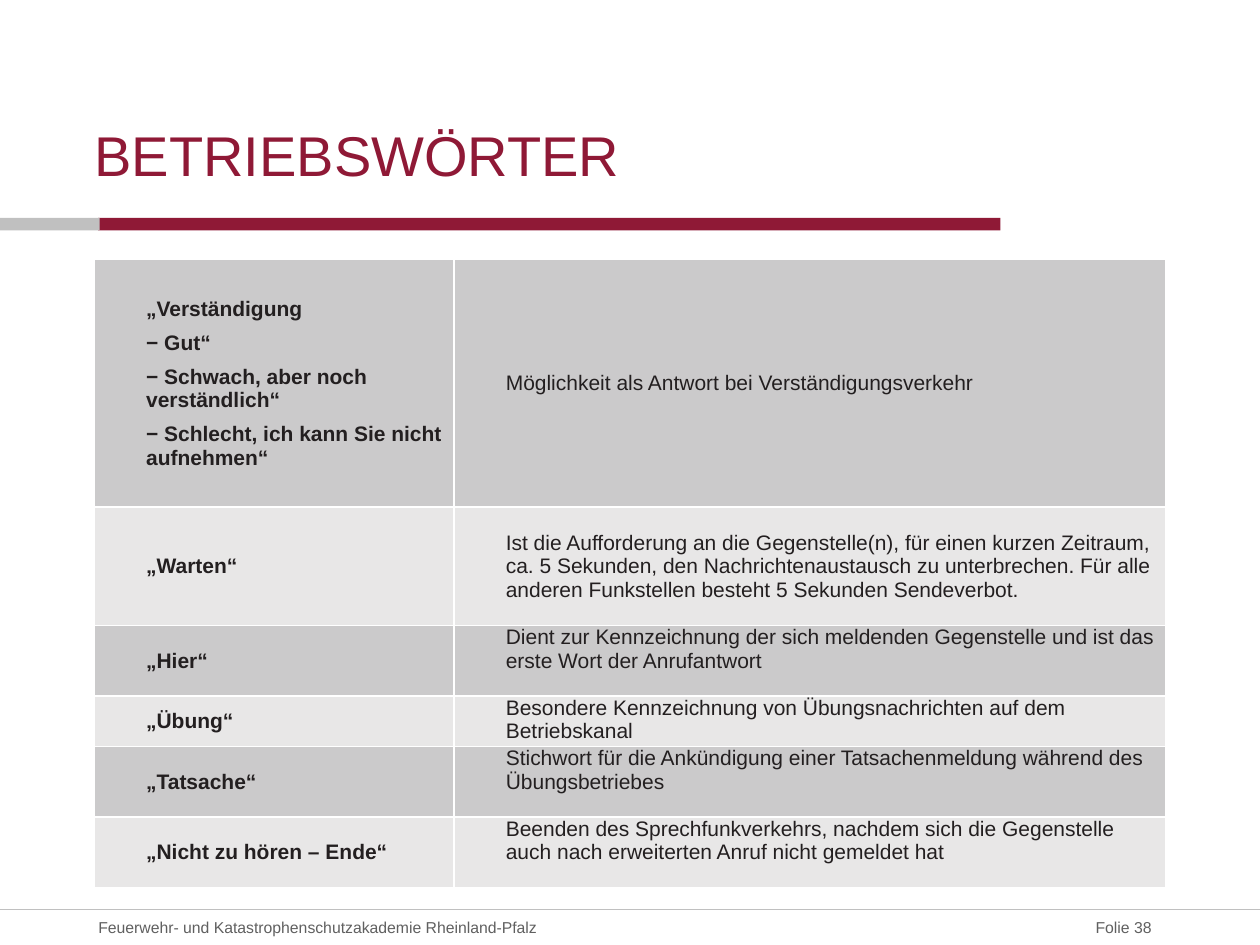
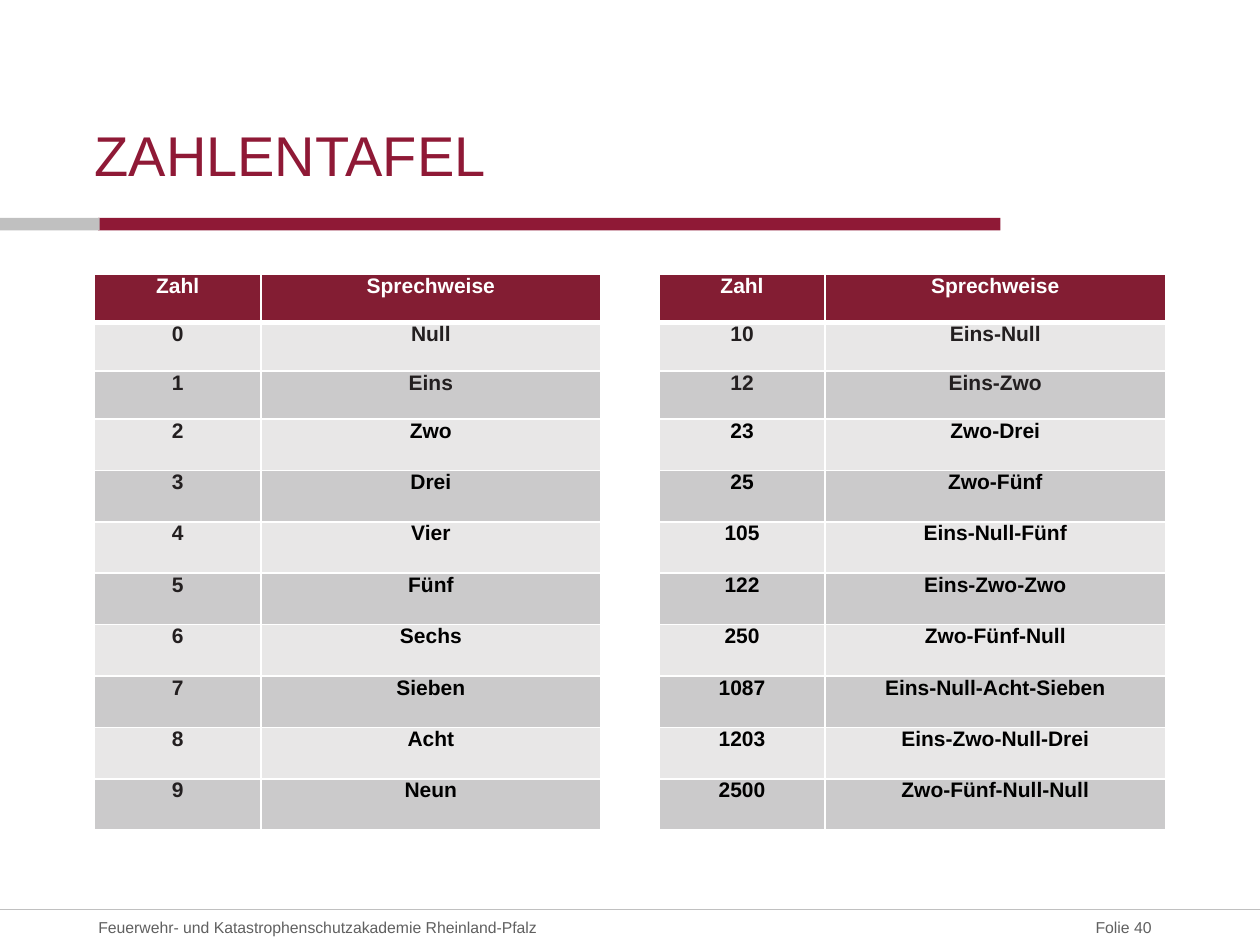
from dataclasses import dataclass

import pptx
import pptx.dml.color
import pptx.enum.shapes
import pptx.enum.text
import pptx.oxml
import pptx.oxml.ns
import pptx.util
from lxml import etree

Align = pptx.enum.text.PP_ALIGN
Anchor = pptx.enum.text.MSO_ANCHOR
Pt = pptx.util.Pt


@dataclass(frozen=True)
class Theme:
    font: str = "Arial"
    wine: str = "8F1936"
    head: str = "831D33"
    silver: str = "C0C0C0"
    dark: str = "CBCACB"
    light: str = "E8E7E7"
    ink: str = "231F20"
    black: str = "000000"
    white: str = "FFFFFF"
    foot: str = "606060"
    title_size: int = 32
    body_size: int = 12
    foot_size: int = 9


@dataclass(frozen=True)
class Box:
    """A place in grid units: the slide has 100 columns and 75 rows."""
    left: float
    top: float
    width: float
    height: float

    def spans(self) -> tuple:
        return tuple(map(grid, (self.left, self.top, self.width, self.height)))


@dataclass(frozen=True)
class Band:
    box: Box
    color: str


@dataclass(frozen=True)
class Note:
    box: Box
    text: str
    align: Align
    right: float = 0


THEME = Theme()
COLS, ROWS = 100, 75
UNIT = pptx.util.Inches(10) // COLS
EDGE = 7.5  # left edge of title and tables

BANDS = [
    Band(Box(7.8, 17.3, 71.6, 1), THEME.wine),
    Band(Box(0, 17.3, 7.9, 1), THEME.silver),
]

TERMS = [
    (19.65, ["„Verständigung", "− Gut“", "− Schwach, aber noch verständlich“",
             "− Schlecht, ich kann Sie nicht aufnehmen“"],
     "Möglichkeit als Antwort bei Verständigungsverkehr"),
    (9.4, ["„Warten“"],
     "Ist die Aufforderung an die Gegenstelle(n), für einen kurzen Zeitraum, "
     "ca. 5 Sekunden, den Nachrichtenaustausch zu unterbrechen. Für alle "
     "anderen Funkstellen besteht 5 Sekunden Sendeverbot."),
    (5.6, ["„Hier“"],
     "Dient zur Kennzeichnung der sich meldenden Gegenstelle und ist das "
     "erste Wort der Anrufantwort"),
    (3.74, ["„Übung“"],
     "Besondere Kennzeichnung von Übungsnachrichten auf dem Betriebskanal"),
    (5.6, ["„Tatsache“"],
     "Stichwort für die Ankündigung einer Tatsachenmeldung während des "
     "Übungsbetriebes"),
    (5.6, ["„Nicht zu hören – Ende“"],
     "Beenden des Sprechfunkverkehrs, nachdem sich die Gegenstelle auch nach "
     "erweiterten Anruf nicht gemeldet hat"),
]

NUMBERS = [
    ("Zahl", "Sprechweise", "", "Zahl", "Sprechweise"),
    ("0", "Null", "", "10", "Eins-Null"),
    ("1", "Eins", "", "12", "Eins-Zwo"),
    ("2", "Zwo", "", "23", "Zwo-Drei"),
    ("3", "Drei", "", "25", "Zwo-Fünf"),
    ("4", "Vier", "", "105", "Eins-Null-Fünf"),
    ("5", "Fünf", "", "122", "Eins-Zwo-Zwo"),
    ("6", "Sechs", "", "250", "Zwo-Fünf-Null"),
    ("7", "Sieben", "", "1087", "Eins-Null-Acht-Sieben"),
    ("8", "Acht", "", "1203", "Eins-Zwo-Null-Drei"),
    ("9", "Neun", "", "2500", "Zwo-Fünf-Null-Null"),
]


def grid(units: float) -> int:
    return round(units * UNIT)


def rgb(color: str) -> pptx.dml.color.RGBColor:
    return pptx.dml.color.RGBColor.from_string(color)


def write(host, *lines: str, size: float = THEME.body_size,
          color: str = THEME.ink, bold: bool = False, align: Align = Align.LEFT,
          anchor: Anchor = Anchor.MIDDLE, left: float = 0, right: float = 0,
          gap: float = 0) -> None:
    """Fill a text frame or a table cell, one paragraph for each line."""
    host.margin_left, host.margin_right = grid(left), grid(right)
    host.margin_top = host.margin_bottom = 0
    host.vertical_anchor = anchor
    frame = getattr(host, "text_frame", host)
    for pos, line in enumerate(lines):
        para = frame.add_paragraph() if pos else frame.paragraphs[0]
        para.alignment = align
        para.space_before = Pt(gap if pos else 0)
        run = para.add_run()
        run.text = line
        run.font.name, run.font.size = THEME.font, Pt(size)
        run.font.bold, run.font.color.rgb = bold, rgb(color)


# Shared frame of every slide
def add_note(slide, note: Note) -> None:
    frame = slide.shapes.add_textbox(*note.box.spans()).text_frame
    frame.word_wrap = True
    write(frame, note.text, size=THEME.foot_size, color=THEME.foot,
          align=note.align, right=note.right)


def add_band(slide, band: Band) -> None:
    shape = slide.shapes.add_shape(
        pptx.enum.shapes.MSO_SHAPE.RECTANGLE, *band.box.spans())
    shape.shadow.inherit = False
    shape.fill.solid()
    shape.fill.fore_color.rgb = rgb(band.color)
    shape.line.fill.background()


def add_rule(slide, top: float) -> None:
    rule = slide.shapes.add_connector(
        pptx.enum.shapes.MSO_CONNECTOR.STRAIGHT,
        0, grid(top), grid(COLS), grid(top))
    rule.line.color.rgb = rgb(THEME.silver)
    rule.line.width = Pt(0.75)
    etree.SubElement(rule._element.spPr, pptx.oxml.ns.qn("a:effectLst"))


def add_slide(deck, title: str, number: int):
    slide = deck.slides.add_slide(deck.slide_layouts.get_by_name("Title Only"))
    for band in BANDS:
        add_band(slide, band)
    add_rule(slide, 72.2)
    add_note(slide, Note(Box(79.4, 72.2, 12.7, 2.8), f"Folie {number}",
                         Align.RIGHT, right=0.7))
    add_note(slide, Note(
        Box(7.8, 72.2, 55.1, 2.8),
        "Feuerwehr- und Katastrophenschutzakademie Rheinland-Pfalz", Align.LEFT))
    head = slide.shapes.title
    head.left, head.top, head.width, head.height = Box(
        EDGE, 4.8, 63.9, 10.1).spans()
    head.text_frame.auto_size = pptx.enum.text.MSO_AUTO_SIZE.NONE
    head.text_frame.word_wrap = True
    write(head.text_frame, title, size=THEME.title_size, color=THEME.wine,
          anchor=Anchor.BOTTOM)
    return slide


# Tables
def add_table(slide, top: float, cols: list[float], rows: list[float]):
    box = Box(EDGE, top, sum(cols), sum(rows))
    table = slide.shapes.add_table(len(rows), len(cols), *box.spans()).table
    table.first_row = table.horz_banding = False
    for col, width in zip(table.columns, cols):
        col.width = grid(width)
    for row, height in zip(table.rows, rows):
        row.height = grid(height)
    return table


def style(cell, fill: str | None, upper: float = 1, lower: float = 1) -> None:
    """Set the fill and the white borders; upper and lower are widths in points."""
    if fill:
        cell.fill.solid()
        cell.fill.fore_color.rgb = rgb(fill)
    else:
        cell.fill.background()
    props = cell._tc.get_or_add_tcPr()
    sides = {"L": 1, "R": 1, "T": upper, "B": lower}
    for pos, (side, width) in enumerate(sides.items()):
        props.insert(pos, pptx.oxml.parse_xml(
            f'<a:ln{side} {pptx.oxml.ns.nsdecls("a")} w="{Pt(width)}">'
            f'<a:solidFill><a:srgbClr val="{THEME.white}"/></a:solidFill>'
            f'</a:ln{side}>'))


def add_terms(slide) -> None:
    table = add_table(slide, 20.6, [28.55, 56.45], [row[0] for row in TERMS])
    for pos, (_, term, text) in enumerate(TERMS):
        word, sense = table.cell(pos, 0), table.cell(pos, 1)
        for cell in (word, sense):
            style(cell, THEME.light if pos % 2 else THEME.dark)
        write(word, *term, bold=True, left=4.1, gap=6)
        write(sense, text, left=4.1,
              anchor=Anchor.MIDDLE if pos < 2 else Anchor.TOP)


def add_numbers(slide) -> None:
    pair = [13.2, 27]
    table = add_table(slide, 21.8, pair + [4.6] + pair, [3.82] * 3 + [4.08] * 8)
    for row, texts in enumerate(NUMBERS):
        shade = THEME.light if row % 2 else THEME.dark
        for col, text in enumerate(texts):
            cell = table.cell(row, col)
            fill = shade if row else THEME.head
            style(cell, fill if text else None,
                  upper=3 if row == 1 else 1, lower=1 if row else 3)
            color = THEME.ink if col == 0 or row < 3 else THEME.black
            write(cell, *filter(None, [text]), bold=True, align=Align.CENTER,
                  color=color if row else THEME.white, anchor=Anchor.TOP)


def main() -> None:
    deck = pptx.Presentation()
    deck.slide_width, deck.slide_height = grid(COLS), grid(ROWS)
    add_terms(add_slide(deck, "BETRIEBSWÖRTER", 38))
    add_numbers(add_slide(deck, "ZAHLENTAFEL", 40))
    deck.save("out.pptx")


if __name__ == "__main__":
    main()
